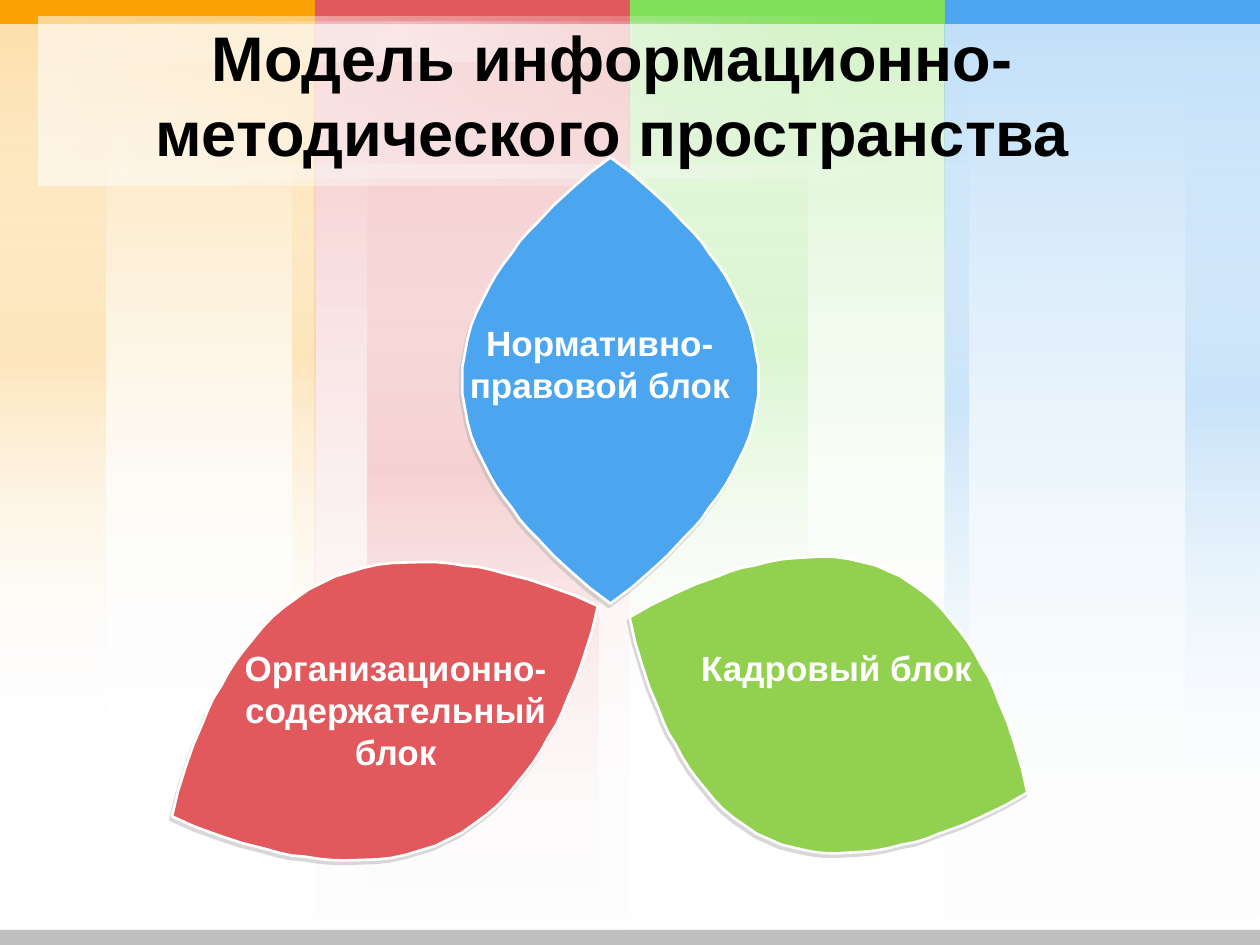
from pptx import Presentation
from pptx.dml.color import RGBColor
from pptx.enum.shapes import MSO_SHAPE as Shape
from pptx.enum.text import MSO_ANCHOR as Anchor, MSO_AUTO_SIZE as AutoSize, PP_ALIGN as Align
from pptx.oxml import parse_xml
from pptx.oxml.ns import nsdecls
from pptx.util import Inches, Pt

WIDTH, HEIGHT = 10, 7.5
COLUMN = WIDTH / 4
FONT = "Arial"
COLORS = {
    "orange": "FCA304", "red": "E1595C", "green": "80E05A", "blue": "4BA5EF",
    "leaf": "92D050", "white": "FFFFFF", "black": "000000",
    "footer": "C0C0C0", "shadow": "B2B2B2",
}
TITLE = "Модель информационно-методического пространства"
COLUMN_ORDER = ["orange", "red", "green", "blue"]

FADE, GLOW = "fade", "glow"
CURTAINS = [
    ("red", 7.5, [(0, 2.5, FADE), (0.42, 1.83, GLOW), (0, 2.5, FADE)]),
    ("green", 5.62, [(0, 2.5, FADE), (0, 1.41, GLOW), (0, 2.5, FADE)]),
    ("blue", 7.47, [(0, 0.19, GLOW), (0, 2.5, FADE), (1.91, 0.59, GLOW), (0, 2.5, FADE)]),
    ("orange", 5.62, [(0, 2.5, FADE), (2.32, 0.18, GLOW), (0, 0.84, GLOW), (0, 2.5, FADE)]),
]
BLUE_GLOW_HEIGHT = 6.37
TITLE_BEAMS = [
    (4.15, -2.5, 0.11, 7.73, GLOW),
    (3.09, -2.65, 1.34, 6.9, FADE),
    (3.05, -2.61, 0.32, 5.88, GLOW),
    (3.09, -2.65, 1.34, 6.9, FADE),
]
PETAL_QUARTER = [
    (0, 177), (16, 165), (32, 151), (45, 139), (58, 125), (65, 118),
    (72, 110), (78, 101), (85, 92), (91, 83), (96, 74), (101, 64),
    (106, 54), (110, 44), (113, 33), (115, 22), (117, 11), (117, 0),
]
PETALS = [
    ("leaf", (5.41, 3.87, 2.33, 3.45), 113.8),
    ("red", (1.92, 3.76, 2.27, 3.77), 63.7),
    ("blue", (3.67, 1.25, 2.35, 3.54), 0),
]
LABELS = [
    ("Организационно-содержательный блок", (1.72, 5.08, 2.84, 1.11)),
    ("Кадровый блок", (5.31, 5.08, 2.66, 0.44)),
    ("Нормативно-правовой блок", (3.52, 2.5, 2.48, 0.77)),
]


def rgb(color):
    return RGBColor.from_string(COLORS[color])


def place(shape, box):
    shape.left, shape.top, shape.width, shape.height = map(Inches, box)


def add_panel(shapes, box, color):
    panel = shapes.add_shape(Shape.RECTANGLE, *map(Inches, box))
    panel.shadow.inherit = False
    panel.line.fill.background()
    panel.fill.solid()
    panel.fill.fore_color.rgb = rgb(color)
    return panel


def add_veil(shapes, box, color, opacity, style):
    veil = add_panel(shapes, box, color)
    stops = [(0, color, opacity), (100, "white", 0)]
    if style == GLOW:
        stops = [(0, "white", 0), (50, color, opacity), (100, "white", 0)]
    stops_xml = "".join(
        f'<a:gs pos="{position * 1000}"><a:srgbClr val="{COLORS[tint]}">'
        f'<a:alpha val="{alpha * 1000}"/></a:srgbClr></a:gs>'
        for position, tint, alpha in stops
    )
    gradient = parse_xml(
        f'<a:gradFill {nsdecls("a")} rotWithShape="1"><a:gsLst>{stops_xml}</a:gsLst>'
        '<a:lin ang="5400000" scaled="0"/></a:gradFill>'
    )
    properties = veil._element.spPr
    properties.replace(properties.find("{*}solidFill"), gradient)
    return veil


def add_backdrop(shapes):
    for color, height, strips in CURTAINS:
        left = COLUMN_ORDER.index(color) * COLUMN
        for offset, width, style in strips:
            short = color == "blue" and style == GLOW
            strip_height = BLUE_GLOW_HEIGHT if short else height
            add_veil(shapes, (left + offset, 0, width, strip_height), color, 20, style)
    for index, color in enumerate(COLUMN_ORDER):
        add_panel(shapes, (index * COLUMN, 0, COLUMN, 0.19), color)
    for *box, style in TITLE_BEAMS:
        add_veil(shapes, box, "white", 35, style).rotation = 270
    add_panel(shapes, (0, HEIGHT - 0.12, WIDTH, 0.12), "footer")


def petal_outline():
    right = PETAL_QUARTER + [(x, -y) for x, y in PETAL_QUARTER[-2::-1]]
    left = [(-x, -y) for x, y in right[1:-1]]
    return right + left


def add_petal(shapes, color, box, rotation):
    start, *rest = petal_outline()
    builder = shapes.build_freeform(*start, scale=Inches(0.01))
    builder.add_line_segments(rest, close=True)
    petal = builder.convert_to_shape(Inches(WIDTH / 2), Inches(HEIGHT / 2))
    place(petal, box)
    petal.rotation = rotation
    petal.fill.solid()
    petal.fill.fore_color.rgb = rgb(color)
    petal.line.color.rgb = rgb("white")
    petal.line.width = Pt(1.5)
    petal.shadow.inherit = False
    effects = petal._element.spPr.find("{*}effectLst")
    effects.append(parse_xml(
        f'<a:outerShdw {nsdecls("a")} blurRad="0" dist="{Pt(2.2)}" dir="{117 * 60000}" '
        f'algn="ctr" rotWithShape="0"><a:srgbClr val="{COLORS["shadow"]}">'
        '<a:alpha val="50000"/></a:srgbClr></a:outerShdw>'
    ))


def write(frame, text, size, color):
    frame.word_wrap = True
    frame.text = text
    paragraph = frame.paragraphs[0]
    paragraph.alignment = Align.CENTER
    paragraph.font.name = FONT
    paragraph.font.size = Pt(size)
    paragraph.font.bold = True
    paragraph.font.color.rgb = rgb(color)


def main():
    presentation = Presentation()
    presentation.slide_width, presentation.slide_height = Inches(WIDTH), Inches(HEIGHT)
    slide = presentation.slides.add_slide(presentation.slide_layouts[5])
    shapes = slide.shapes

    add_backdrop(shapes)
    for color, box, rotation in PETALS:
        add_petal(shapes, color, box, rotation)

    title = shapes.title
    shapes._spTree.append(title._element)
    place(title, (0.86, 0.23, 8, 1.03))
    title.text_frame.vertical_anchor = Anchor.MIDDLE
    title.text_frame.auto_size = AutoSize.NONE
    write(title.text_frame, TITLE, 36, "black")

    for text, box in LABELS:
        label = shapes.add_textbox(*map(Inches, box))
        label.text_frame.auto_size = AutoSize.SHAPE_TO_FIT_TEXT
        write(label.text_frame, text, 20, "white")

    presentation.save("out.pptx")


if __name__ == "__main__":
    main()
